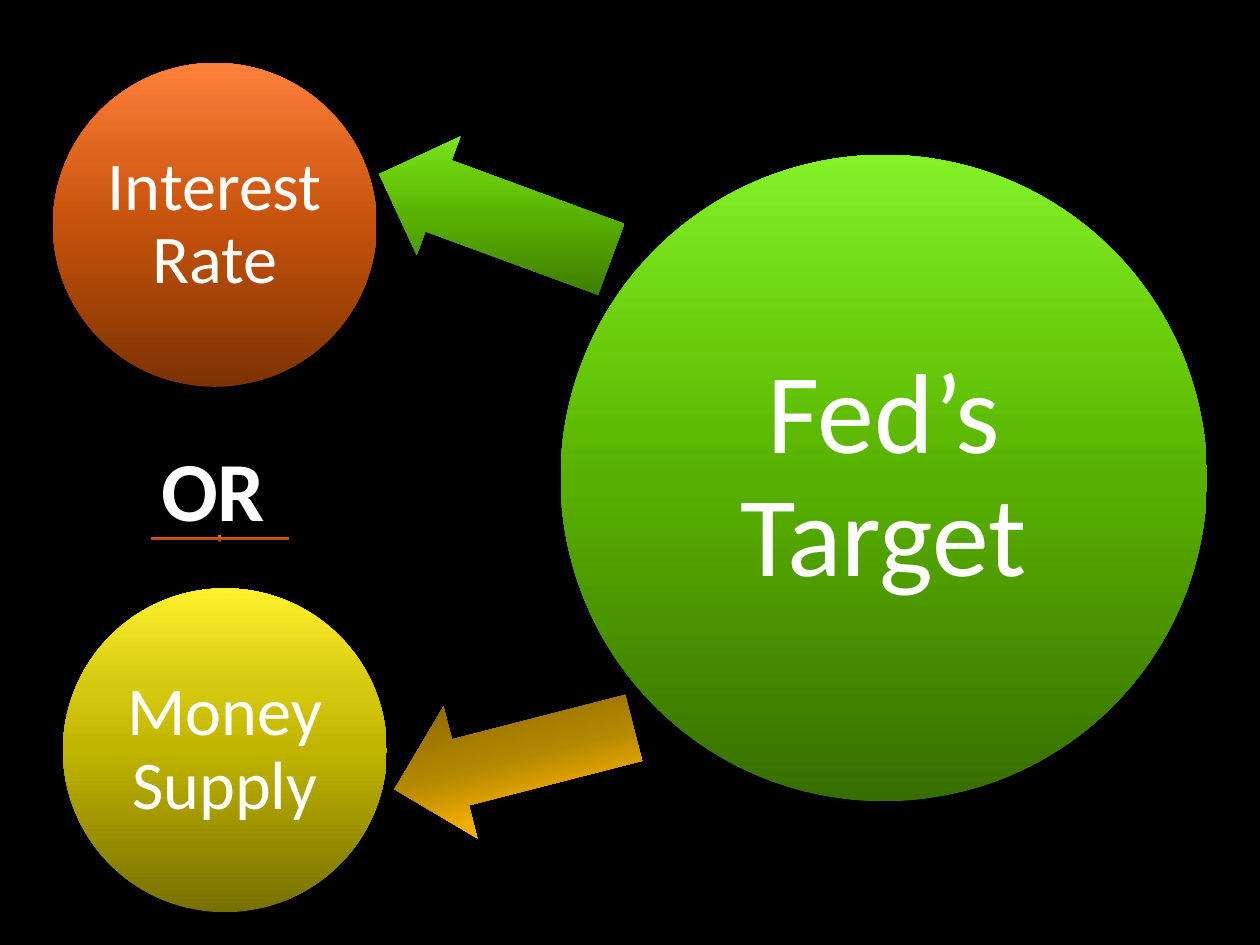
from lxml import etree
from pptx import Presentation
from pptx.dml.color import RGBColor
from pptx.enum.shapes import MSO_SHAPE
from pptx.enum.text import MSO_ANCHOR, PP_ALIGN
from pptx.oxml.ns import qn
from pptx.util import Inches, Pt

OVAL, PLUS, ARROW = MSO_SHAPE.OVAL, MSO_SHAPE.MATH_PLUS, MSO_SHAPE.RIGHT_ARROW
MIDDLE, CENTER = MSO_ANCHOR.MIDDLE, PP_ALIGN.CENTER
BLACK = RGBColor(0x00, 0x00, 0x00)
WHITE = RGBColor(0xFF, 0xFF, 0xFF)
FONT = "Calibri"

STOPS = (0, 50, 70, 100)
ORANGE = [RGBColor.from_string(c) for c in ("7D3203", "C4520B", "DB631C", "FF803C")]
YELLOW = [RGBColor.from_string(c) for c in ("777000", "C0B400", "D6CA11", "FFF12D")]
GREEN = [RGBColor.from_string(c) for c in ("376E00", "58B100", "68CC0B", "83F229")]
GOLD = [RGBColor.from_string(c) for c in ("705400", "B48800", "F0AC00", "FFC342")]

CIRCLES = [
    ("Interest Rate", 0.42, 0.5, 2.57, ORANGE, 39, 0.05),
    ("Money Supply", 0.5, 4.67, 2.57, YELLOW, 39, 0.05),
    ("Fed’s Target", 4.45, 1.23, 5.13, GREEN, 65, 0.09),
]
RATE_ARROW = (2.95, 1.22, 1.96, 1)
SUPPLY_ARROW = (3.1, 5.48, 1.96, 1.08)
OR_DIVIDER = (1, 4.24, 1.49, 0.07)
OR_LABEL = (1.18, 3.42, 1.83, 0.91)


def add_gradient_shape(slide, kind, box, colors, turns_with_shape=True):
    shape = slide.shapes.add_shape(kind, *map(Inches, box))
    shape.shadow.inherit = False
    shape.line.fill.background()
    gradient = etree.Element(qn("a:gradFill"), rotWithShape=str(int(turns_with_shape)))
    stop_list = etree.SubElement(gradient, qn("a:gsLst"))
    for position, color in zip(STOPS, colors):
        stop = etree.SubElement(stop_list, qn("a:gs"), pos=str(position * 1000))
        etree.SubElement(stop, qn("a:srgbClr"), val=str(color))
    etree.SubElement(gradient, qn("a:lin"), ang=str(270 * 60000), scaled="0")
    properties = shape.element.spPr
    properties.insert(properties.index(properties.find(qn("a:prstGeom"))) + 1, gradient)
    return shape


def style_text(paragraph, size, bold=False):
    font = paragraph.runs[0].font
    font.name, font.size, font.bold = FONT, Pt(size), bold
    font.color.rgb = WHITE


def add_circle(slide, label, left, top, diameter, colors, size, inset):
    circle = add_gradient_shape(slide, OVAL, (left, top, diameter, diameter), colors)
    frame = circle.text_frame
    frame.text = label
    frame.word_wrap = True
    frame.vertical_anchor = MIDDLE
    frame.margin_left = frame.margin_right = Inches(inset)
    frame.margin_top = frame.margin_bottom = Inches(inset)
    paragraph = frame.paragraphs[0]
    paragraph.alignment = CENTER
    paragraph.line_spacing = 0.9
    style_text(paragraph, size)


def main():
    presentation = Presentation()
    presentation.slide_width, presentation.slide_height = Inches(10), Inches(7.5)
    slide = presentation.slides.add_slide(presentation.slide_layouts[6])
    slide.background.fill.solid()
    slide.background.fill.fore_color.rgb = BLACK

    add_gradient_shape(slide, PLUS, OR_DIVIDER, ORANGE)
    rate_arrow = add_gradient_shape(slide, ARROW, RATE_ARROW, GREEN, turns_with_shape=False)
    rate_arrow.rotation = 200.2
    rate_arrow.adjustments[0] = 0.6
    for circle in CIRCLES:
        add_circle(slide, *circle)
    supply_arrow = add_gradient_shape(slide, ARROW, SUPPLY_ARROW, GOLD)
    supply_arrow.rotation = 165.6

    or_label = slide.shapes.add_textbox(*map(Inches, OR_LABEL))
    or_label.text_frame.word_wrap = True
    or_label.text_frame.text = "OR"
    style_text(or_label.text_frame.paragraphs[0], 48, bold=True)

    presentation.save("out.pptx")


if __name__ == "__main__":
    main()
